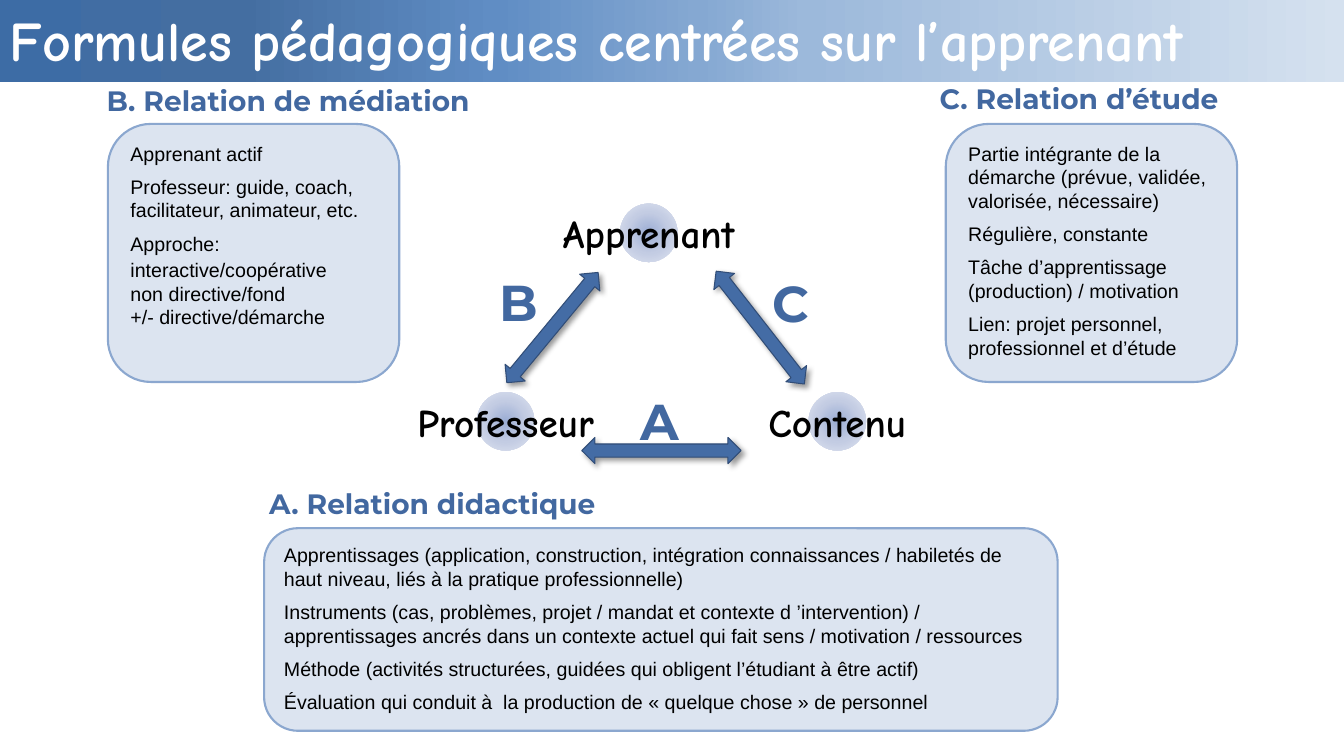
from lxml import etree
from pptx import Presentation
from pptx.dml.color import RGBColor
from pptx.enum.shapes import MSO_SHAPE
from pptx.enum.text import MSO_ANCHOR, PP_ALIGN
from pptx.oxml import parse_xml
from pptx.oxml.ns import nsdecls, qn
from pptx.util import Inches, Pt


def color(value):
    return RGBColor.from_string(value)


def write_text(shape, lines, font_format, gaps=None, align=PP_ALIGN.LEFT):
    frame = shape.text_frame
    for index, line in enumerate(lines):
        paragraph = frame.paragraphs[0] if index == 0 else frame.add_paragraph()
        paragraph.alignment = align
        paragraph.space_before = Pt(gaps[index] if gaps else 0)
        run = paragraph.add_run()
        run.text = line
        for name, value in font_format.items():
            if name == "color":
                run.font.color.rgb = color(value)
            else:
                setattr(run.font, name, value)


TITLE_FORMAT = {"name": "Comic Neue", "size": Pt(40), "bold": True, "color": "FFFFFF"}
POLE_FORMAT = {"name": "Comic Neue", "size": Pt(28), "bold": True, "color": "000000"}
BODY_FORMAT = {"name": "Arial", "size": Pt(14), "color": "000000"}
LETTER_FORMAT = {"name": "Montserrat", "size": Pt(36), "bold": True, "color": "4268A0"}
HEADING_FORMAT = {**LETTER_FORMAT, "size": Pt(20)}

presentation = Presentation()
presentation.slide_width = Inches(13.33)
presentation.slide_height = Inches(7.5)
slide = presentation.slides.add_slide(presentation.slide_layouts[6])
shapes = slide.shapes

banner = shapes.add_shape(MSO_SHAPE.RECTANGLE, 0, 0, Inches(13.33), Inches(0.81))
banner_stops = [(0, "3D6CA5"), (18, "446EA1"), (37, "608DC4"),
                (52, "85A8D2"), (60, "9CB9DB"), (100, "D5E1EF")]
gradients = [(banner, banner_stops, '<a:lin ang="0" scaled="0"/>')]

title = shapes.add_textbox(0, Inches(0.18), Inches(13.33), Inches(0.51))
title.text_frame.word_wrap = True
title.text_frame.vertical_anchor = MSO_ANCHOR.MIDDLE
write_text(title, ["Formules pédagogiques centrées sur l’apprenant"], TITLE_FORMAT)
title.text_frame.paragraphs[0].line_spacing = 0.9

pole_stops = [(0, "9BADD4"), (50, "C3CCE3"), (100, "E2E6F1")]
pole_shade = '<a:path path="circle"><a:fillToRect l="50000" t="50000" r="50000" b="50000"/></a:path>'
for name, left, top in [("Apprenant", 6.15, 2.02), ("Professeur", 4.73, 3.89), ("Contenu", 8.02, 3.89)]:
    pole = shapes.add_shape(MSO_SHAPE.OVAL, Inches(left), Inches(top), Inches(0.57), Inches(0.58))
    pole.text_frame.word_wrap = False
    pole.text_frame.vertical_anchor = MSO_ANCHOR.MIDDLE
    write_text(pole, [name], POLE_FORMAT, align=PP_ALIGN.CENTER)
    gradients.append((pole, pole_stops, pole_shade))

for shape, stops, shade in gradients:
    shape.shadow.inherit = False
    shape.line.fill.background()
    stop_xml = "".join(f'<a:gs pos="{position * 1000}"><a:srgbClr val="{value}"/></a:gs>'
                       for position, value in stops)
    gradient = parse_xml(f'<a:gradFill {nsdecls("a")} rotWithShape="1">'
                         f'<a:gsLst>{stop_xml}</a:gsLst>{shade}</a:gradFill>')
    shape._element.spPr.find(qn("a:prstGeom")).addnext(gradient)

boxes = [
    (2.62, 5.24, 7.87, 2.01, [0, 7, 7, 7], [
        "Apprentissages (application, construction, intégration connaissances / habiletés de haut niveau, "
        "liés à la pratique professionnelle)",
        "Instruments (cas, problèmes, projet / mandat et contexte d ’intervention) / apprentissages ancrés "
        "dans un contexte actuel qui fait sens / motivation / ressources",
        "Méthode (activités structurées, guidées qui obligent l’étudiant à être actif)",
        "Évaluation qui conduit à  la production de « quelque chose » de personnel",
    ]),
    (1.07, 1.23, 2.89, 2.56, [0, 7, 7, 2, 0, 0], [
        "Apprenant actif",
        "Professeur: guide, coach, facilitateur, animateur, etc.",
        "Approche:",
        "interactive/coopérative",
        "non directive/fond",
        "+/- directive/démarche",
    ]),
    (9.38, 1.23, 2.89, 2.56, [0, 7, 7, 7], [
        "Partie intégrante de la démarche (prévue, validée, valorisée, nécessaire)",
        "Régulière, constante",
        "Tâche d’apprentissage (production) / motivation",
        "Lien: projet personnel, professionnel et d’étude",
    ]),
]
for left, top, width, height, gaps, lines in boxes:
    box = shapes.add_shape(MSO_SHAPE.ROUNDED_RECTANGLE, Inches(left), Inches(top), Inches(width), Inches(height))
    box.shadow.inherit = False
    box.fill.solid()
    box.fill.fore_color.rgb = color("DCE4F0")
    box.line.color.rgb = color("8BA7CF")
    box.line.width = Pt(1.5)
    box.text_frame.word_wrap = True
    box.text_frame.vertical_anchor = MSO_ANCHOR.TOP
    write_text(box, lines, BODY_FORMAT, gaps)

for left, top, height, rotation in [(5.35, 2.54, 1.42, 39.6), (6.43, 3.68, 1.58, 90), (7.41, 2.54, 1.42, 142)]:
    arrow = shapes.add_shape(MSO_SHAPE.UP_DOWN_ARROW, Inches(left), Inches(top), Inches(0.26), Inches(height))
    arrow.rotation = rotation
    arrow.fill.solid()
    arrow.fill.fore_color.rgb = color("446CA5")
    arrow.line.color.rgb = color("314D77")
    arrow.line.width = Pt(0.75)
    arrow.shadow.inherit = False
    effects = arrow._element.spPr.find(qn("a:effectLst"))
    shadow = etree.SubElement(effects, qn("a:outerShdw"), blurRad=str(Pt(4)), dist=str(Pt(3)),
                              dir="2700000", algn="tl", rotWithShape="0")
    shade_color = etree.SubElement(shadow, qn("a:srgbClr"), val="000000")
    etree.SubElement(shade_color, qn("a:alpha"), val="40000")

labels = [
    ("A", 6.25, 3.82, 0.57, 0.71, LETTER_FORMAT),
    ("B", 4.86, 2.64, 0.57, 0.71, LETTER_FORMAT),
    ("C", 7.56, 2.65, 0.57, 0.71, LETTER_FORMAT),
    ("A. Relation didactique", 2.57, 4.78, 3.6, 0.44, HEADING_FORMAT),
    ("B. Relation de médiation", 0.96, 0.78, 3.94, 0.44, HEADING_FORMAT),
    ("C. Relation d’étude", 9.22, 0.76, 3.16, 0.44, HEADING_FORMAT),
]
for text, left, top, width, height, font_format in labels:
    label = shapes.add_textbox(Inches(left), Inches(top), Inches(width), Inches(height))
    label.text_frame.word_wrap = True
    write_text(label, [text], font_format)

presentation.save("out.pptx")
